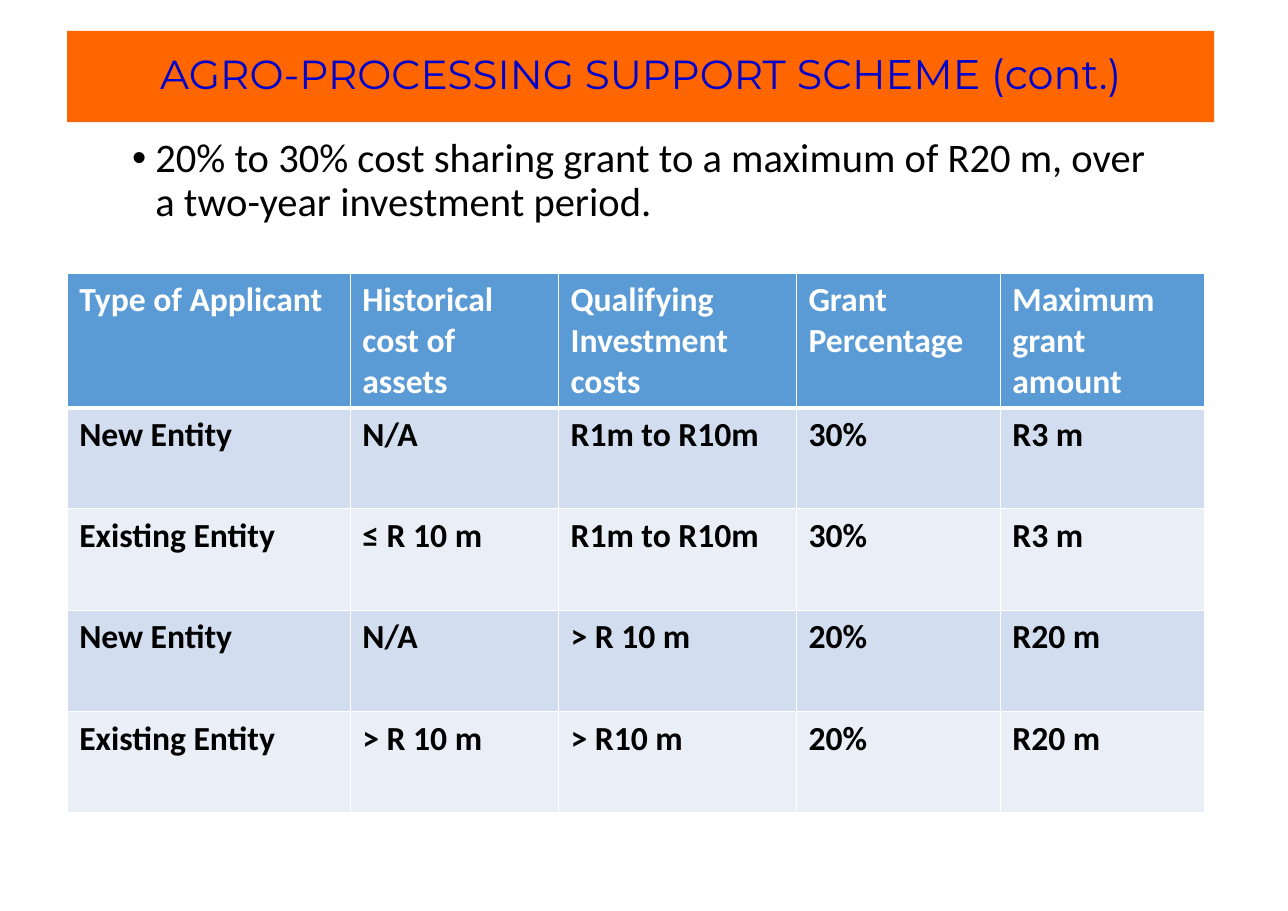
"""Build the agro-processing support scheme slide with its grant table."""
from dataclasses import dataclass

from lxml import etree
from pptx import Presentation
from pptx import util as u
from pptx.dml.color import RGBColor
from pptx.enum import text
from pptx.oxml import ns

COLOURS = {
    "banner": "FF6600",
    "title": "0000CC",
    "body": "000000",
    "white": "FFFFFF",
    "header": "5B9BD5",
    "odd_row": "D2DEEF",
    "even_row": "EAEFF7",
}
HEADER_HEIGHT, ROW_HEIGHT = 1.21, 0.92
THIN, THICK = 1, 3


@dataclass(frozen=True)
class Box:
    left: float
    top: float
    width: float
    height: float

    def lengths(self) -> list[u.Length]:
        return [u.Inches(side) for side in (self.left, self.top, self.width, self.height)]


@dataclass(frozen=True)
class Column:
    heading: str
    width: float
    values: tuple[str, ...]


@dataclass(frozen=True)
class TitlePart:
    wording: str
    size: float


TITLE_BOX = Box(0.61, 0.28, 10.41, 0.83)
BULLET_BOX = Box(1.09, 1.19, 9.51, 1.1)
TABLE_BOX = Box(0.61, 2.48, 10.32, HEADER_HEIGHT + 4 * ROW_HEIGHT)
TITLE_PARTS = (TitlePart("AGRO-PROCESSING SUPPORT ", 26.5), TitlePart("SCHEME (cont.)", 27))
BULLET = "20% to 30% cost sharing grant to a maximum of R20 m, over a two-year investment period."
COLUMNS = (
    Column("Type of Applicant", 2.57, ("New Entity", "Existing Entity") * 2),
    Column("Historical cost of assets", 1.89, ("N/A", "≤ R 10 m", "N/A", "> R 10 m")),
    Column("Qualifying Investment costs", 2.16, ("R1m to R10m", "R1m to R10m", "> R 10 m", "> R10 m")),
    Column("Grant Percentage", 1.85, ("30%", "30%", "20%", "20%")),
    Column("Maximum grant amount", 1.85, ("R3 m", "R3 m", "R20 m", "R20 m")),
)


def colour(name: str) -> RGBColor:
    return RGBColor.from_string(COLOURS[name])


def format_run(run, font_name: str, size: float, colour_name: str, bold: bool = False) -> None:
    run.font.name = font_name
    run.font.size = u.Pt(size)
    run.font.bold = bold
    run.font.color.rgb = colour(colour_name)


def set_margins(holder) -> None:
    holder.margin_left = holder.margin_right = u.Inches(0.11)
    holder.margin_top = holder.margin_bottom = u.Inches(0.06)


def draw_title(slide) -> None:
    title = slide.shapes.title
    title.left, title.top, title.width, title.height = TITLE_BOX.lengths()
    title.fill.solid()
    title.fill.fore_color.rgb = colour("banner")
    frame = title.text_frame
    frame.auto_size = text.MSO_AUTO_SIZE.NONE
    frame.vertical_anchor = text.MSO_ANCHOR.MIDDLE
    set_margins(frame)
    paragraph = frame.paragraphs[0]
    paragraph.alignment = text.PP_ALIGN.CENTER
    paragraph.line_spacing = 0.9
    for part in TITLE_PARTS:
        run = paragraph.add_run()
        run.text = part.wording
        format_run(run, "Montserrat", part.size, "title")


def draw_bullet(slide) -> None:
    frame = slide.shapes.add_textbox(*BULLET_BOX.lengths()).text_frame
    frame.word_wrap = True
    set_margins(frame)
    paragraph = frame.paragraphs[0]
    paragraph.text = BULLET
    paragraph.line_spacing = 0.9
    paragraph.space_before = u.Pt(8.6)
    format_run(paragraph.runs[0], "Calibri", 26.5, "body")
    properties = paragraph._p.get_or_add_pPr()
    properties.set("marL", str(u.Inches(0.21)))
    properties.set("indent", str(u.Inches(-0.21)))
    etree.SubElement(properties, ns.qn("a:buFont"), typeface="Arial")
    etree.SubElement(properties, ns.qn("a:buChar"), char="•")


def set_borders(cell, top: float, bottom: float) -> None:
    properties = cell._tc.get_or_add_tcPr()
    for side, width in (("L", THIN), ("R", THIN), ("T", top), ("B", bottom)):
        line = etree.SubElement(properties, ns.qn(f"a:ln{side}"), w=str(u.Pt(width)))
        fill = etree.SubElement(line, ns.qn("a:solidFill"))
        etree.SubElement(fill, ns.qn("a:srgbClr"), val=COLOURS["white"])


def fill_cell(cell, wording: str, row: int) -> None:
    set_borders(cell, THICK if row == 1 else THIN, THICK if row == 0 else THIN)
    background = "header" if row == 0 else "odd_row" if row % 2 else "even_row"
    cell.fill.solid()
    cell.fill.fore_color.rgb = colour(background)
    set_margins(cell)
    cell.text_frame.text = wording
    run = cell.text_frame.paragraphs[0].runs[0]
    format_run(run, "Calibri", 22, "body" if row else "white", bold=True)


def draw_table(slide) -> None:
    row_count = 1 + len(COLUMNS[0].values)
    table = slide.shapes.add_table(row_count, len(COLUMNS), *TABLE_BOX.lengths()).table
    table.first_row = True
    table.horz_banding = False
    for row, table_row in enumerate(table.rows):
        table_row.height = u.Inches(ROW_HEIGHT if row else HEADER_HEIGHT)
    for index, column in enumerate(COLUMNS):
        table.columns[index].width = u.Inches(column.width)
        for row, wording in enumerate((column.heading, *column.values)):
            fill_cell(table.cell(row, index), wording, row)


def main() -> None:
    presentation = Presentation()
    presentation.slide_width = u.Inches(11.69)
    presentation.slide_height = u.Inches(8.27)
    slide = presentation.slides.add_slide(presentation.slide_layouts[5])
    draw_title(slide)
    draw_bullet(slide)
    draw_table(slide)
    presentation.save("out.pptx")


if __name__ == "__main__":
    main()
